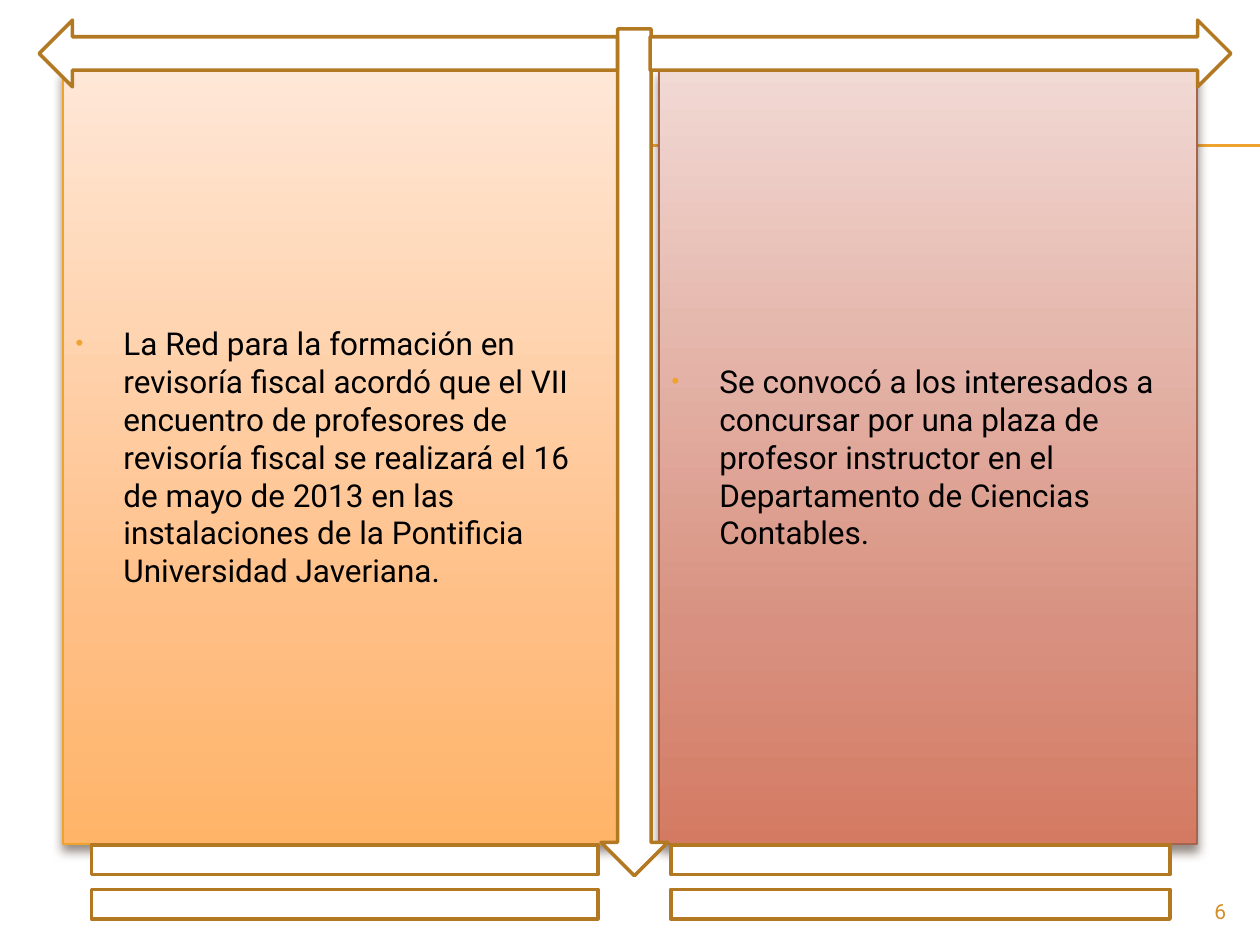
from copy import deepcopy
from dataclasses import dataclass

from lxml.etree import SubElement
from pptx import Presentation
from pptx.dml.color import RGBColor
from pptx.enum.shapes import MSO_CONNECTOR, MSO_SHAPE
from pptx.enum.text import MSO_ANCHOR, MSO_AUTO_SIZE, PP_ALIGN
from pptx.oxml.ns import qn
from pptx.util import Inches, Pt


@dataclass(frozen=True)
class Theme:
    """Colours, font and type sizes of the slide."""
    font: str = "Roboto"
    body: int = 18
    number: int = 12
    text: str = "000000"
    white: str = "FFFFFF"
    accent: str = "F0A22E"
    outline: str = "B27822"
    number_color: str = "D48F29"
    shadow: str = "4E3B30"
    red_line: str = "A5644E"
    orange: tuple = ("FFE7D7", "FFBE84", "FFB468")
    red: tuple = ("F1D9D4", "D89180", "D47A62")


THEME = Theme()
STOPS = (0, 0.72, 1)


def rgb(value):
    """Turn a hex string into a colour."""
    return RGBColor.from_string(value)


def add_element(parent, tag, **attributes):
    """Append a DrawingML element with its attributes."""
    return SubElement(parent, qn(tag), {k: str(v) for k, v in attributes.items()})


def place(sp, box):
    """Move a shape to a box given in inches."""
    sp.left, sp.top, sp.width, sp.height = map(Inches, box)


def set_gradient(sp, colors):
    """Fill a shape with a downward three-stop gradient."""
    sp.fill.gradient()
    sp.fill.gradient_angle = 270
    stops = sp.element.spPr.find(qn("a:gradFill")).find(qn("a:gsLst"))
    stops.append(deepcopy(stops[-1]))
    for stop, position, color in zip(sp.fill.gradient_stops, STOPS, colors):
        stop.position = position
        stop.color.rgb = rgb(color)


def set_shadow(sp):
    """Give a shape a soft shadow below it."""
    sp.shadow.inherit = False
    effects = sp.element.spPr.find(qn("a:effectLst"))
    outer = add_element(effects, "a:outerShdw", blurRad=Pt(6), dist=Pt(4),
                        dir=5400000, algn="ctr", rotWithShape=0)
    color = add_element(outer, "a:srgbClr", val=THEME.shadow)
    add_element(color, "a:alpha", val=60000)


def set_bullet(p):
    """Give a paragraph a hanging accent bullet."""
    pPr = p._p.get_or_add_pPr()
    pPr.set("marL", str(Inches(0.38)))
    pPr.set("indent", str(Inches(-0.38)))
    add_element(add_element(pPr, "a:buClr"), "a:srgbClr", val=THEME.accent)
    add_element(pPr, "a:buSzPct", val=70000)
    add_element(pPr, "a:buFont", typeface="Arial")
    add_element(pPr, "a:buChar", char="•")


def fill_panel(sp, box, text, colors, line):
    """Format a body placeholder as a gradient panel."""
    place(sp, box)
    set_gradient(sp, colors)
    sp.line.color.rgb = rgb(line)
    sp.line.width = Pt(0.79)
    set_shadow(sp)
    tf = sp.text_frame
    tf.text = text
    tf.word_wrap = True
    tf.auto_size = MSO_AUTO_SIZE.NONE
    tf.vertical_anchor = MSO_ANCHOR.MIDDLE
    p = tf.paragraphs[0]
    set_bullet(p)
    p.space_before = Pt(0)
    p.font.name, p.font.size = THEME.font, Pt(THEME.body)
    p.font.color.rgb = rgb(THEME.text)


def add_rule(s, left, top, right):
    """Draw a horizontal accent rule behind the other shapes."""
    line = s.shapes.add_connector(MSO_CONNECTOR.STRAIGHT, Inches(left), Inches(top),
                                  Inches(right), Inches(top))
    line.line.color.rgb = rgb(THEME.accent)
    line.line.width = Pt(0.75)
    add_element(line.element.spPr, "a:effectLst")
    line.element.getparent().insert(2, line.element)


def add_outline(s, kind, box):
    """Add a white shape with a dark gold outline."""
    sp = s.shapes.add_shape(kind, *map(Inches, box))
    sp.shadow.inherit = False
    sp.fill.solid()
    sp.fill.fore_color.rgb = rgb(THEME.white)
    sp.line.color.rgb = rgb(THEME.outline)
    sp.line.width = Pt(2)


def add_frame(s, box):
    """Add the arrows and equal signs that frame the panels."""
    left, top, width, height = box
    right, bottom = left + width, top + height
    add_outline(s, MSO_SHAPE.DOWN_ARROW, (left + 4.77, top + 0.23, 0.53, 6.72))
    add_outline(s, MSO_SHAPE.RIGHT_ARROW, (right - 4.84, top + 0.16, 4.61, 0.53))
    add_outline(s, MSO_SHAPE.LEFT_ARROW, (left + 0.31, top + 0.16, 4.59, 0.53))
    add_outline(s, MSO_SHAPE.MATH_EQUAL, (left, bottom - 1, 5.47, 1))
    add_outline(s, MSO_SHAPE.MATH_EQUAL, (right - 5.39, bottom - 1, 5.39, 1))


def add_number(s, box, text):
    """Add the slide number."""
    tf = s.shapes.add_textbox(*map(Inches, box)).text_frame
    tf.word_wrap = True
    tf.text = text
    p = tf.paragraphs[0]
    p.alignment = PP_ALIGN.RIGHT
    p.font.name, p.font.size = THEME.font, Pt(THEME.number)
    p.font.color.rgb = rgb(THEME.number_color)


def main():
    """Build and save the slide."""
    prs = Presentation()
    prs.slide_width, prs.slide_height = Inches(10), Inches(7.5)
    s = prs.slides.add_slide(prs.slide_layouts[3])
    title = s.shapes.title.element
    title.getparent().remove(title)
    fill_panel(s.placeholders[1], (0.5, 0.55, 4.42, 6.15),
               "La Red para la formación en revisoría fiscal acordó que el VII "
               "encuentro de profesores de revisoría fiscal se realizará el 16 de "
               "mayo de 2013 en las instalaciones de la Pontificia Universidad "
               "Javeriana.", THEME.orange, THEME.accent)
    fill_panel(s.placeholders[2], (5.23, 0.55, 4.27, 6.15),
               "Se convocó a los interesados a concursar por una plaza de profesor "
               "instructor en el Departamento de Ciencias Contables.",
               THEME.red, THEME.red_line)
    for top in (1.16, 1.15):
        add_rule(s, 0.56, top, 10)
    add_frame(s, (0, 0, 10, 7.5))
    add_number(s, (9, 7.08, 0.83, 0.27), "6")
    prs.save("out.pptx")


if __name__ == "__main__":
    main()
